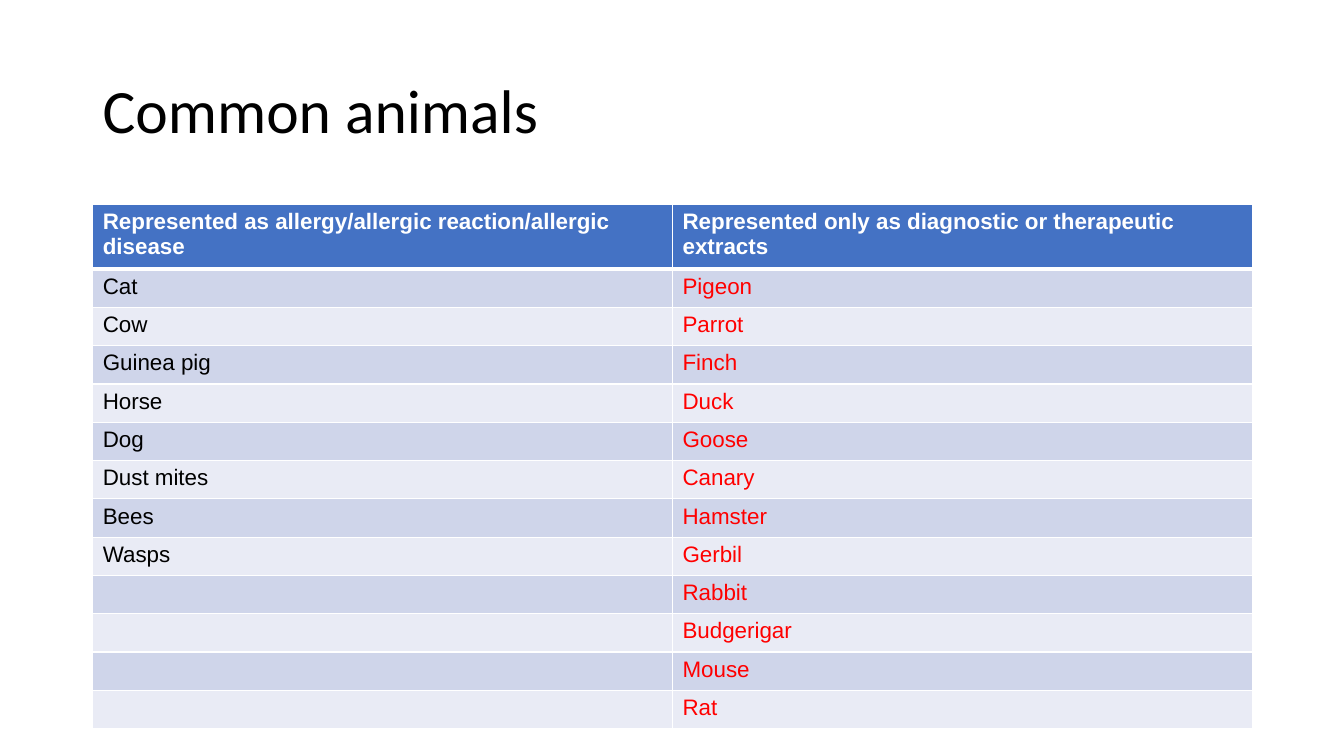
import itertools

import lxml.etree
import pptx
import pptx.dml.color
import pptx.enum.text
import pptx.oxml.ns
import pptx.util

EMU_PER_PX = 9144  # 100 px to the inch

TITLE = "Common animals"
HEADERS = (
    "Represented as allergy/allergic reaction/allergic disease",
    "Represented only as diagnostic or therapeutic extracts",
)
ALLERGY_ANIMALS = ("Cat", "Cow", "Guinea pig", "Horse", "Dog", "Dust mites", "Bees", "Wasps")
EXTRACT_ANIMALS = (
    "Pigeon", "Parrot", "Finch", "Duck", "Goose", "Canary",
    "Hamster", "Gerbil", "Rabbit", "Budgerigar", "Mouse", "Rat",
)


def px(length):
    return pptx.util.Emu(length * EMU_PER_PX)


def color(hex_string):
    return pptx.dml.color.RGBColor.from_string(hex_string)


def add_child(parent, tag, **attributes):
    return lxml.etree.SubElement(parent, pptx.oxml.ns.qn(tag), **attributes)


class SlideBuilder:
    title_font = "Calibri"
    table_font = "Arial"
    table_size = 16
    black = "000000"
    white = "FFFFFF"
    red = "FF0000"
    header_fill = "4472C4"
    band_fills = ("CFD5EA", "E9EBF5")
    thin_border = 1
    thick_border = 3

    def __init__(self, slide):
        self.slide = slide

    def style(self, paragraph, font_name, size, font_color, bold=False):
        font = paragraph.font
        font.name = font_name
        font.size = pptx.util.Pt(size)
        font.bold = bold
        font.color.rgb = color(font_color)

    def title(self, text, left, top, width, height):
        frame = self.slide.shapes.add_textbox(px(left), px(top), px(width), px(height)).text_frame
        frame.word_wrap = True
        frame.vertical_anchor = pptx.enum.text.MSO_ANCHOR.MIDDLE
        paragraph = frame.paragraphs[0]
        paragraph.text = text
        paragraph.line_spacing = 0.9
        self.style(paragraph, self.title_font, 44, self.black)

    def borders(self, cell, top, bottom):
        """Draw white cell borders; top and bottom are widths in points."""
        properties = cell._tc.get_or_add_tcPr()
        widths = {"L": self.thin_border, "R": self.thin_border, "T": top, "B": bottom}
        for side, width in widths.items():
            line = add_child(properties, f"a:ln{side}", w=str(pptx.util.Pt(width)))
            add_child(add_child(line, "a:solidFill"), "a:srgbClr", val=self.white)

    def cell(self, cell, text, fill, font_color, bold, top, bottom):
        self.borders(cell, top, bottom)
        cell.fill.solid()
        cell.fill.fore_color.rgb = color(fill)
        paragraph = cell.text_frame.paragraphs[0]
        self.style(paragraph, self.table_font, self.table_size, font_color, bold)
        if text:
            paragraph.text = text
        else:
            # An empty cell takes its line height from the paragraph end mark.
            add_child(paragraph._p, "a:endParaRPr", sz=str(self.table_size * 100))

    def table(self, rows, left, top, width, header_height, row_height):
        height = header_height + row_height * (len(rows) - 1)
        frame = self.slide.shapes.add_table(
            len(rows), len(rows[0]), px(left), px(top), px(width), px(height)
        )
        table = frame.table
        for row_index, texts in enumerate(rows):
            is_header = row_index == 0
            table.rows[row_index].height = px(header_height if is_header else row_height)
            fill = self.header_fill if is_header else self.band_fills[(row_index - 1) % 2]
            text_colors = (self.white, self.white) if is_header else (self.black, self.red)
            top_border = self.thick_border if row_index == 1 else self.thin_border
            bottom_border = self.thick_border if is_header else self.thin_border
            for column_index, (text, text_color) in enumerate(zip(texts, text_colors)):
                self.cell(
                    table.cell(row_index, column_index), text, fill, text_color,
                    is_header, top_border, bottom_border,
                )


def main():
    presentation = pptx.Presentation()
    presentation.slide_width = px(1333)
    presentation.slide_height = px(750)
    builder = SlideBuilder(presentation.slides.add_slide(presentation.slide_layouts[6]))
    builder.title(TITLE, 92, 40, 1150, 145)
    animals = itertools.zip_longest(ALLERGY_ANIMALS, EXTRACT_ANIMALS, fillvalue="")
    builder.table([HEADERS, *animals], 92, 203, 1150, header_height=64, row_height=38)
    presentation.save("out.pptx")


if __name__ == "__main__":
    main()
